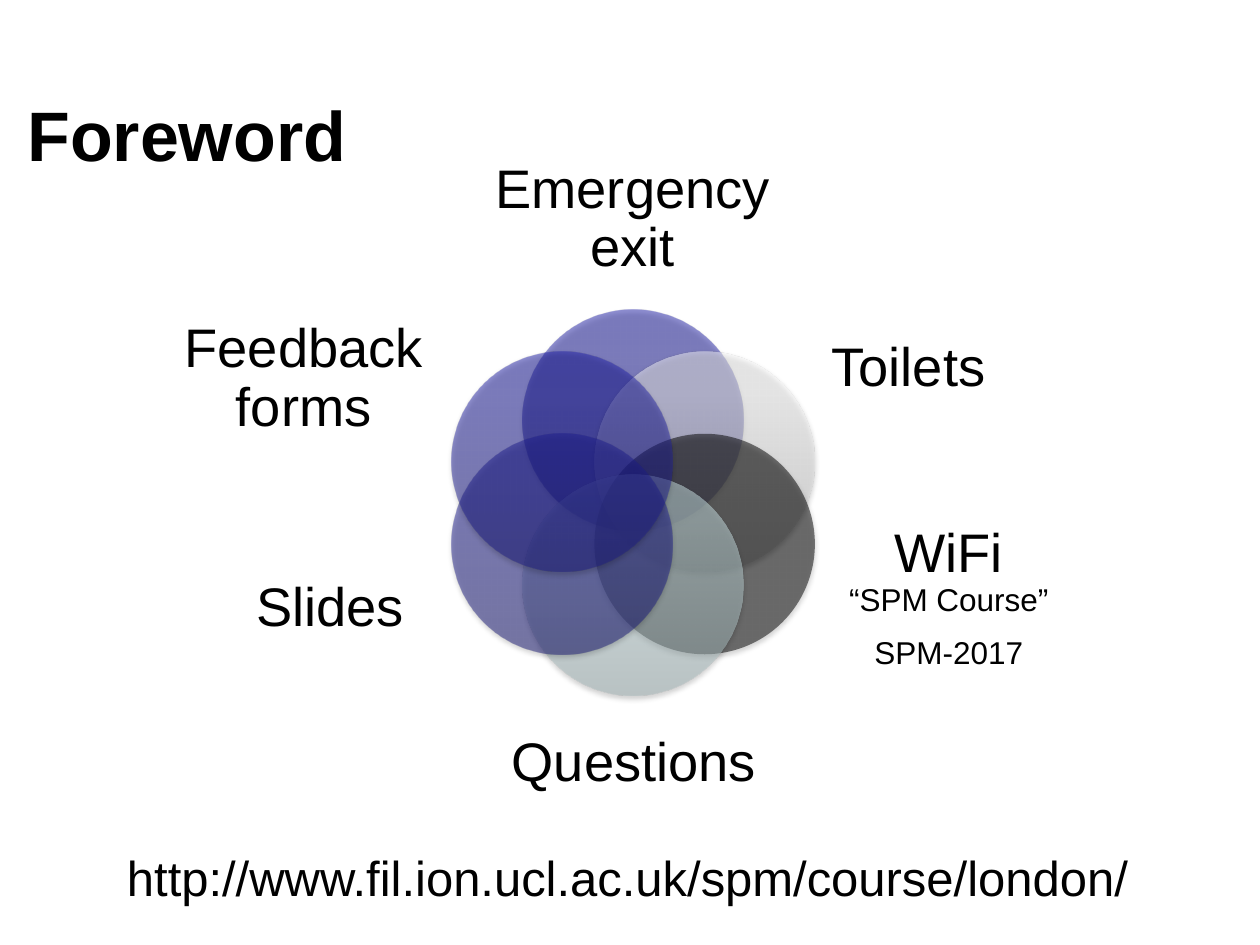
import copy
import math

import pptx
import pptx.chart.data
import pptx.dml.color
import pptx.enum.shapes
import pptx.enum.text
import pptx.oxml
import pptx.oxml.ns
import pptx.util

Inches = pptx.util.Inches
Pt = pptx.util.Pt
RGB = pptx.dml.color.RGBColor
qn = pptx.oxml.ns.qn

BLACK = RGB(0x00, 0x00, 0x00)
BLUE = [RGB(0x1B, 0x1B, 0x7E), RGB(0x23, 0x23, 0xA3), RGB(0x20, 0x20, 0xA6)]
NAVY = [RGB(0x17, 0x17, 0x71), RGB(0x1E, 0x1E, 0x93), RGB(0x1C, 0x1C, 0x96)]
GREY = [RGB(0xBE, 0xBE, 0xBE), RGB(0xF7, 0xF7, 0xF7), RGB(0xF8, 0xF8, 0xF8)]
TEAL = [RGB(0xA0, 0xB3, 0xB5), RGB(0xD0, 0xE8, 0xEB), RGB(0xD1, 0xEA, 0xEC)]
STOPS = (0, 0.8, 1)

SHADOW = (
    '<a:outerShdw xmlns:a="http://schemas.openxmlformats.org/drawingml/2006/main"'
    ' blurRad="39370" dist="22860" dir="5400000" rotWithShape="0">'
    '<a:srgbClr val="000000"><a:alpha val="35000"/></a:srgbClr></a:outerShdw>'
)

WIFI = [[("WiFi", 31), ("“SPM Course”", 18)], [("SPM-2017", 18)]]
PETALS = [
    (BLUE, [[("Emergency exit", 31)]], (-1.1, -2.84, 2.19, 1.19)),
    (GREY, [[("Toilets", 31)]], (1.15, -1.71, 2.07, 1.3)),
    ([BLACK], WIFI, (1.31, 0.03, 2.39, 1.46)),
    (TEAL, [[("Questions", 31)]], (-1.09, 1.48, 2.19, 1.19)),
    (NAVY, [[("Slides", 31)]], (-3.44, 0.11, 2.07, 1.46)),
    (BLUE, [[("Feedback forms", 31)]], (-3.65, -1.71, 2.07, 1.46)),
]


def line(slide, box, text, size, bold=False, wrap=True):
    """Place one line of text in the box."""
    frame = slide.shapes.add_textbox(*map(Inches, box)).text_frame
    frame.word_wrap = wrap
    para = frame.paragraphs[0]
    para.text = text
    font = para.font
    font.name, font.size, font.bold = "Arial", Pt(size), bold
    font.color.rgb = BLACK
    return frame


def label(slide, box, paras):
    """Centre a petal's label in the box."""
    frame = slide.shapes.add_textbox(*map(Inches, box)).text_frame
    frame.word_wrap = True
    frame.vertical_anchor = pptx.enum.text.MSO_ANCHOR.MIDDLE
    frame.margin_left = frame.margin_right = 0
    frame.margin_top = frame.margin_bottom = 0
    for i, parts in enumerate(paras):
        para = frame.add_paragraph() if i else frame.paragraphs[0]
        para.alignment = pptx.enum.text.PP_ALIGN.CENTER
        para.line_spacing = 0.9
        if i < len(paras) - 1:
            para.space_after = Pt(11)
        para.font.name = "Arial"
        para.font.color.rgb = BLACK
        for j, (text, size) in enumerate(parts):
            if j:
                para.add_line_break()
            run = para.add_run()
            run.text = text
            run.font.size = Pt(size)


def petal(slide, box, tones):
    """Draw a half clear circle with a soft shadow in the box."""
    oval = pptx.enum.shapes.MSO_SHAPE.OVAL
    shape = slide.shapes.add_shape(oval, *map(Inches, box))
    props = shape.element.spPr
    fill = shape.fill
    if len(tones) == 1:
        fill.solid()
        fill.fore_color.rgb = tones[0]
    else:
        fill.gradient()
        fill.gradient_angle = 90
        stops = props.find(".//" + qn("a:gsLst"))
        stops.append(copy.deepcopy(stops[-1]))
        for stop, tone, place in zip(fill.gradient_stops, tones, STOPS):
            stop.color.rgb = tone
            stop.position = place
    for tint in props.iter(qn("a:srgbClr")):
        tint.append(pptx.oxml.parse_xml(
            '<a:alpha xmlns:a="http://schemas.openxmlformats.org/drawingml/2006/main"'
            ' val="50000"/>'))
    shape.line.fill.background()
    shape.shadow.inherit = False
    props.find(qn("a:effectLst")).append(pptx.oxml.parse_xml(SHADOW))


def flower(slide, box):
    """Set six petals on a ring in the box, with labels around them."""
    left, top, wide, high = box
    mid, axis = left + wide / 2, top + high / 2
    size = 1.75
    reach = (high - size) / 2
    for i, (tones, paras, (dx, dy, w, h)) in enumerate(PETALS):
        turn = math.radians(60 * i - 90)
        x = mid + reach * math.cos(turn) - size / 2
        y = axis + reach * math.sin(turn) - size / 2
        petal(slide, (x, y, size, size), tones)
        label(slide, (mid + dx, axis + dy, w, h), paras)


def main():
    """Build the slide and save it."""
    deck = pptx.Presentation()
    deck.slide_width, deck.slide_height = Inches(10), Inches(7.5)
    slide = deck.slides.add_slide(deck.slide_layouts[6])
    line(slide, (0.12, 0.68, 9, 0.77), "Foreword", 40, bold=True)
    flower(slide, (3.58, 2.46, 2.89, 3.06))
    link = line(slide, (0.91, 6.68, 8.24, 0.57),
                "http://www.fil.ion.ucl.ac.uk/spm/course/london/", 28, wrap=False)
    link.auto_size = pptx.enum.text.MSO_AUTO_SIZE.SHAPE_TO_FIT_TEXT
    deck.save("out.pptx")


if __name__ == "__main__":
    main()
